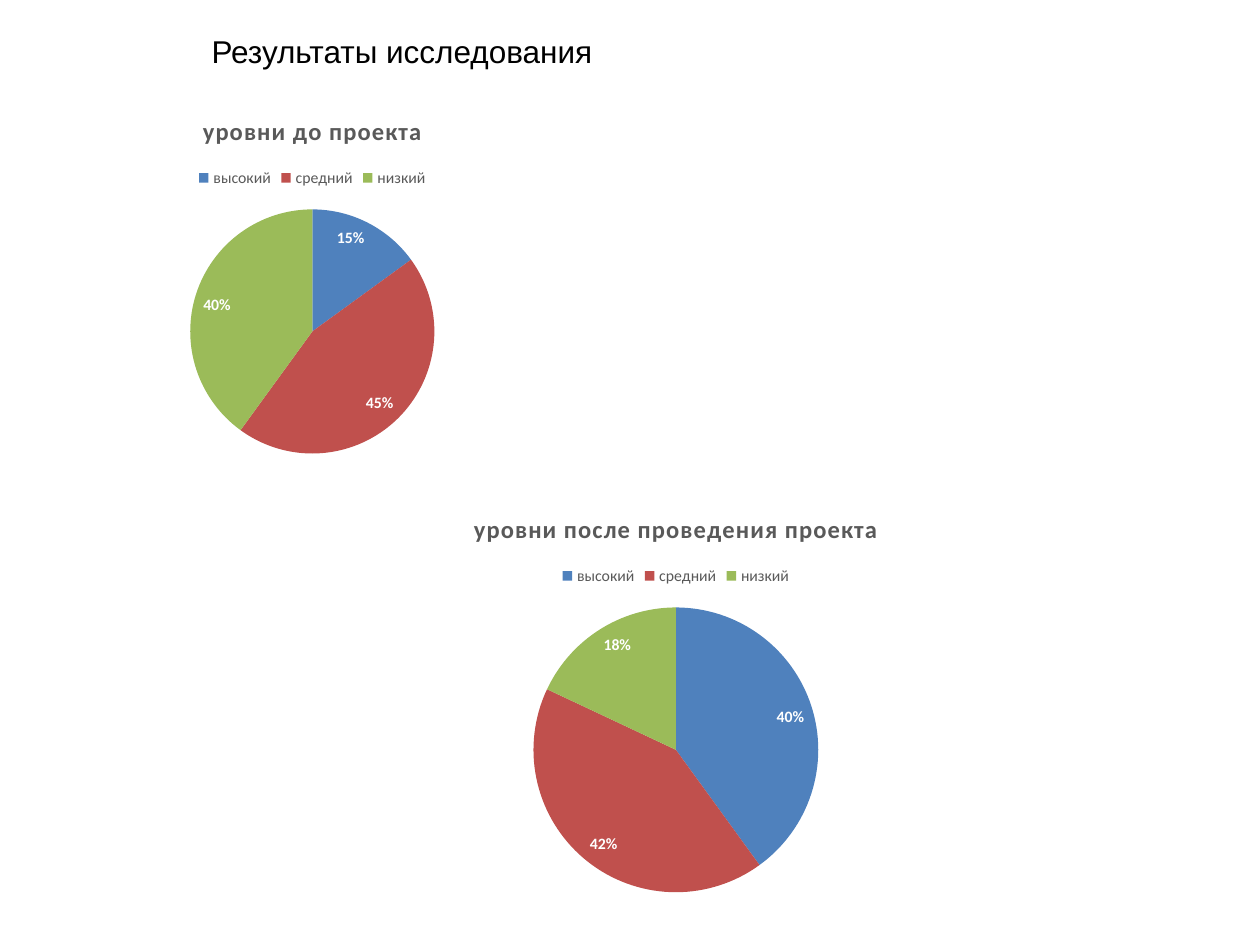
from dataclasses import dataclass

from pptx import Presentation
from pptx.chart.data import CategoryChartData as ChartData
from pptx.dml.color import RGBColor as Rgb
from pptx.enum.chart import XL_CHART_TYPE as ChartType
from pptx.enum.chart import XL_LABEL_POSITION as LabelPos
from pptx.enum.chart import XL_LEGEND_POSITION as LegendPos
from pptx.enum.text import MSO_AUTO_SIZE as AutoSize
from pptx.util import Pt


@dataclass(frozen=True)
class Theme:
    """Colours, fonts and type sizes of the slide."""
    ink: str = "000000"
    grey: str = "595959"
    white: str = "FFFFFF"
    levels: tuple = ("4F81BD", "C0504D", "9BBB59")
    heading_font: str = "Arial"
    chart_font: str = "Calibri"
    heading: float = 18
    chart_title: float = 14
    chart_base: float = 10
    small: float = 9
    title_spacing: float = 0.5


def apply(target, values):
    """Set each named attribute on the target."""
    for name, value in values.items():
        setattr(target, name, value)


class SlideWriter:
    """Holds the theme and the current slide."""

    def __init__(self, theme, slide):
        """Keep the theme and the slide to draw on."""
        self.theme, self.slide = theme, slide

    def style(self, font, name, size, color, bold=False):
        """Format a font."""
        apply(font, {"name": name, "size": Pt(size), "bold": bold})
        font.color.rgb = Rgb.from_string(color)

    def heading(self, text, left, top, width, height):
        """Add the slide heading."""
        frame = self.slide.shapes.add_textbox(
            Pt(left), Pt(top), Pt(width), Pt(height)).text_frame
        apply(frame, {"word_wrap": True, "margin_left": Pt(12.2),
                      "auto_size": AutoSize.SHAPE_TO_FIT_TEXT})
        run = frame.paragraphs[0].add_run()
        run.text = text
        self.style(run.font, self.theme.heading_font, self.theme.heading, self.theme.ink)

    def pie(self, title, levels, left, top, width, height):
        """Add a titled pie chart of the level shares."""
        theme = self.theme
        shares = ChartData()
        shares.categories = list(levels)
        shares.add_series(title, list(levels.values()))
        chart = self.slide.shapes.add_chart(
            ChartType.PIE, Pt(left), Pt(top), Pt(width), Pt(height), shares).chart
        self.style(chart.font, theme.chart_font, theme.chart_base, theme.ink)

        caption = chart.chart_title.text_frame.paragraphs[0].add_run()
        caption.text = title
        self.style(caption.font, theme.chart_font, theme.chart_title, theme.grey, True)
        caption._r.get_or_add_rPr().set("spc", str(int(theme.title_spacing * 100)))

        chart.has_legend = True
        apply(chart.legend, {"position": LegendPos.TOP, "include_in_layout": False})
        self.style(chart.legend.font, theme.chart_font, theme.small, theme.grey)

        plot = chart.plots[0]
        apply(plot, {"vary_by_categories": True, "has_data_labels": True})
        series = plot.series[0]
        for index, color in enumerate(theme.levels):
            fill = series.points[index].format.fill
            fill.solid()
            fill.fore_color.rgb = Rgb.from_string(color)
        labels = plot.data_labels
        apply(labels, {"show_percentage": True, "show_value": False,
                       "number_format": "0%", "number_format_is_linked": False,
                       "position": LabelPos.INSIDE_END})
        self.style(labels.font, theme.chart_font, theme.small, theme.white, True)


def main():
    """Build the slide and save it."""
    deck = Presentation()
    apply(deck, {"slide_width": Pt(720), "slide_height": Pt(540)})
    writer = SlideWriter(Theme(), deck.slides.add_slide(deck.slide_layouts[6]))
    writer.heading("Результаты исследования", 108.7, 14.8, 360, 29)
    writer.pie("уровни до проекта",
               {"высокий": 15, "средний": 45, "низкий": 40},
               48.2, 54.5, 260.6, 214.6)
    writer.pie("уровни после проведения проекта",
               {"высокий": 40, "средний": 42, "низкий": 18},
               235.4, 281.5, 301.7, 238.3)
    deck.save("out.pptx")


if __name__ == "__main__":
    main()
